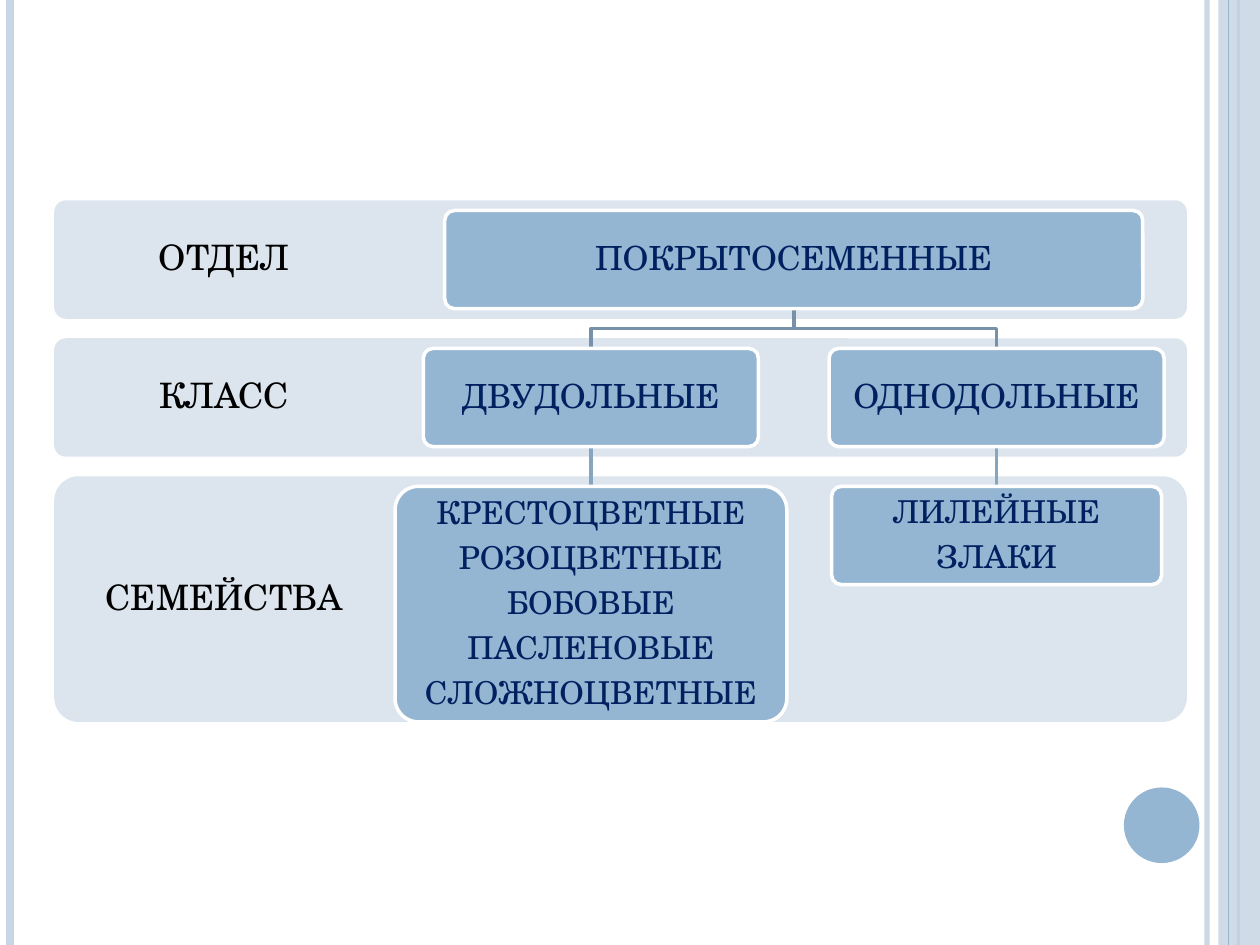
import pptx
import pptx.util
import pptx.dml.color
import pptx.enum.shapes
import pptx.enum.text
import pptx.oxml
import pptx.oxml.ns

RGBColor = pptx.dml.color.RGBColor
Inches = pptx.util.Inches
Pt = pptx.util.Pt
SHAPE = pptx.enum.shapes.MSO_SHAPE

WHITE = RGBColor(0xFF, 0xFF, 0xFF)
BLACK = RGBColor(0x00, 0x00, 0x00)
NAVY = RGBColor(0x00, 0x20, 0x60)
BLUE = RGBColor(0x94, 0xB6, 0xD2)
PALE_BLUE = RGBColor(0xC8, 0xD7, 0xE5)
BAND = RGBColor(0xDC, 0xE5, 0xEE)
UPPER_LINK = RGBColor(0x77, 0x92, 0xA8)
LOWER_LINK = RGBColor(0x86, 0xA5, 0xBF)

FONT = "TeX Gyre Schola"
SLIDE_W, SLIDE_H = 10, 7.5
BAND_LEFT, BAND_W, LABEL_W = 0.43, 8.99, 2.7
FIRST_BAND, BAND_STEP = 1.59, 1.095
BAND_HEIGHTS = [0.94, 0.94, 1.95]
NODE_INSET, NODE_H = 0.08, 0.78
ROOT_X, DICOT_X, MONOCOT_X = 6.3, 4.69, 7.91


def band_top(row):
    return FIRST_BAND + row * BAND_STEP


def node_top(row):
    return band_top(row) + NODE_INSET


def set_alpha(color_format_owner, percent):
    color = next(color_format_owner.iter(pptx.oxml.ns.qn("a:srgbClr")))
    alpha = pptx.oxml.parse_xml(
        f'<a:alpha {pptx.oxml.ns.nsdecls("a")} val="{percent * 1000}"/>')
    color.append(alpha)


def add_filled(slide, preset, box, fill, outline=None):
    shape = slide.shapes.add_shape(preset, *map(Inches, box))
    shape.shadow.inherit = False
    shape.fill.solid()
    shape.fill.fore_color.rgb = fill
    if outline is None:
        shape.line.fill.background()
    else:
        shape.line.color.rgb = outline
        shape.line.width = Pt(2)
    if preset == SHAPE.ROUNDED_RECTANGLE:
        shape.adjustments[0] = 0.1
    return shape


def add_line(slide, x, top, bottom, color, width):
    line = slide.shapes.add_connector(
        pptx.enum.shapes.MSO_CONNECTOR.STRAIGHT,
        *map(Inches, (x, top, x, bottom)))
    line.line.color.rgb = color
    line.line.width = Pt(width)
    line._element.spPr.append(
        pptx.oxml.parse_xml(f'<a:effectLst {pptx.oxml.ns.nsdecls("a")}/>'))
    return line


def write(shape, lines, size, color, margin):
    frame = shape.text_frame
    frame.word_wrap = True
    frame.vertical_anchor = pptx.enum.text.MSO_ANCHOR.MIDDLE
    frame.margin_left = frame.margin_right = Inches(margin)
    frame.margin_top = frame.margin_bottom = Inches(margin)
    frame.text = "\n".join(lines)
    for paragraph in frame.paragraphs:
        paragraph.alignment = pptx.enum.text.PP_ALIGN.CENTER
        paragraph.line_spacing = 0.9
        paragraph.space_after = Pt(size * 0.35)
        paragraph.font.name = FONT
        paragraph.font.size = Pt(size)
        paragraph.font.color.rgb = color


def add_band(slide, row, label):
    top, height = band_top(row), BAND_HEIGHTS[row]
    add_filled(slide, SHAPE.ROUNDED_RECTANGLE,
               (BAND_LEFT, top, BAND_W, height), BAND)
    heading = slide.shapes.add_textbox(
        *map(Inches, (BAND_LEFT, top, LABEL_W, height)))
    write(heading, [label], 20, BLACK, 0.16)


def add_node(slide, row, center, width, lines, size, height=NODE_H):
    box = (center - width / 2, node_top(row), width, height)
    node = add_filled(slide, SHAPE.ROUNDED_RECTANGLE, box, BLUE, WHITE)
    write(node, lines, size, NAVY, 0.08 if size == 19 else 0.07)


def add_branch(slide, start_x, end_x):
    top, bottom = node_top(0) + NODE_H, node_top(1)
    middle = (top + bottom) / 2
    builder = slide.shapes.build_freeform(
        Inches(start_x), Inches(top), scale=1.0)
    corners = [(start_x, middle), (end_x, middle), (end_x, bottom)]
    builder.add_line_segments(
        [(Inches(x), Inches(y)) for x, y in corners], close=False)
    branch = builder.convert_to_shape()
    branch.shadow.inherit = False
    branch.fill.background()
    branch.line.color.rgb = UPPER_LINK
    branch.line.width = Pt(2)


def add_frame(slide):
    inner_edge = add_line(slide, 9.58, 0, SLIDE_H, PALE_BLUE, 3)
    set_alpha(inner_edge._element, 93)
    add_line(slide, 0.08, 0, SLIDE_H, PALE_BLUE, 4.5)
    add_line(slide, 9.83, 0, SLIDE_H, BLUE, 1.5)
    side_strip = add_filled(slide, SHAPE.RECTANGLE,
                            (9.67, 0, SLIDE_W - 9.67, SLIDE_H), PALE_BLUE)
    set_alpha(side_strip._element, 87)
    add_line(slide, 9.75, 0, SLIDE_H, BLUE, 0.75)
    add_filled(slide, SHAPE.OVAL, (8.92, 6.25, 0.6, 0.6), BLUE)


def main():
    deck = pptx.Presentation()
    deck.slide_width, deck.slide_height = Inches(SLIDE_W), Inches(SLIDE_H)
    slide = deck.slides.add_slide(deck.slide_layouts[6])
    add_frame(slide)
    for row, label in enumerate(["ОТДЕЛ", "КЛАСС", "СЕМЕЙСТВА"]):
        add_band(slide, row, label)
    for class_x in (DICOT_X, MONOCOT_X):
        add_branch(slide, ROOT_X, class_x)
        add_line(slide, class_x, node_top(1) + NODE_H, node_top(2),
                 LOWER_LINK, 2)
    add_node(slide, 0, ROOT_X, 5.54, ["ПОКРЫТОСЕМЕННЫЕ"], 19)
    add_node(slide, 1, DICOT_X, 2.66, ["ДВУДОЛЬНЫЕ"], 19)
    add_node(slide, 1, MONOCOT_X, 2.66, ["ОДНОДОЛЬНЫЕ"], 19)
    dicot_families = ["КРЕСТОЦВЕТНЫЕ", "РОЗОЦВЕТНЫЕ", "БОБОВЫЕ",
                      "ПАСЛЕНОВЫЕ", "СЛОЖНОЦВЕТНЫЕ"]
    add_node(slide, 2, DICOT_X, 3.11, dicot_families, 18, height=1.87)
    add_node(slide, 2, MONOCOT_X, 2.62, ["ЛИЛЕЙНЫЕ", "ЗЛАКИ"], 18)
    deck.save("out.pptx")


if __name__ == "__main__":
    main()
